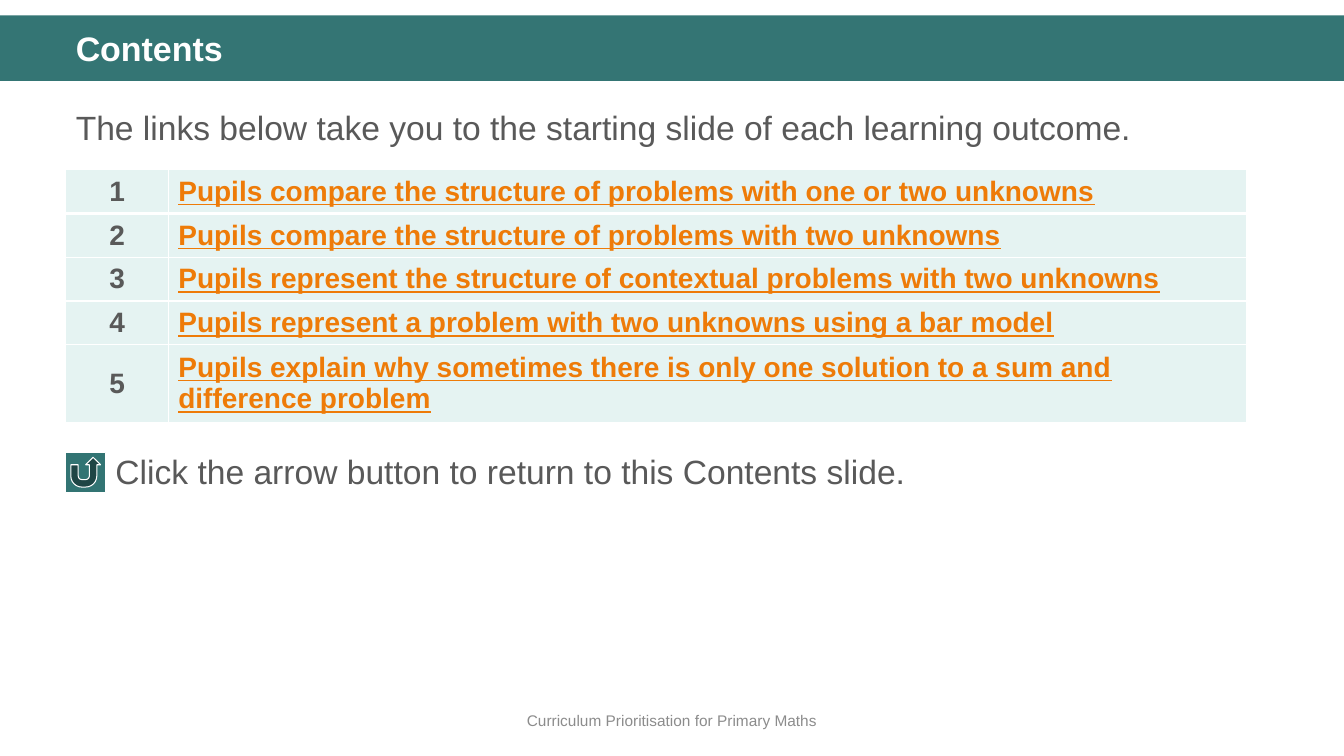
from dataclasses import dataclass

import pptx
import pptx.dml.color
import pptx.enum.shapes
import pptx.enum.text
import pptx.oxml
import pptx.oxml.ns
import pptx.util

Cm, Pt = pptx.util.Cm, pptx.util.Pt
RGBColor = pptx.dml.color.RGBColor
MSO_SHAPE = pptx.enum.shapes.MSO_SHAPE
PP_ALIGN = pptx.enum.text.PP_ALIGN
MSO_ANCHOR = pptx.enum.text.MSO_ANCHOR

TEAL_BAND = RGBColor(0x34, 0x75, 0x74)
TEAL_BUTTON = RGBColor(0x32, 0x74, 0x73)
PALE_TEAL = RGBColor(0xE5, 0xF3, 0xF2)
ORANGE = RGBColor(0xEE, 0x7B, 0x08)
DARK_GREY = RGBColor(0x59, 0x59, 0x59)
MID_GREY = RGBColor(0x8C, 0x8C, 0x8C)
WHITE = RGBColor(0xFF, 0xFF, 0xFF)

SLIDE_W, SLIDE_H = 33.87, 19.05
MARGIN = 1.66
BODY_W = 30.94

OUTCOMES = [
    "Pupils compare the structure of problems with one or two unknowns",
    "Pupils compare the structure of problems with two unknowns",
    "Pupils represent the structure of contextual problems with two unknowns",
    "Pupils represent a problem with two unknowns using a bar model",
    "Pupils explain why sometimes there is only one solution to a sum and difference problem",
]


@dataclass
class Box:
    """Position and size in centimetres."""
    left: float
    top: float
    width: float
    height: float

    def lengths(self) -> list:
        return [Cm(v) for v in (self.left, self.top, self.width, self.height)]


def write_text(tf, text: str, *, size: float, color: RGBColor, bold: bool = False,
               underline: bool = False, align=PP_ALIGN.LEFT, spacing: float = 1.0) -> None:
    p = tf.paragraphs[0]
    p.alignment = align
    p.line_spacing = spacing
    r = p.add_run()
    r.text = text
    r.font.name = "Arial"
    r.font.size = Pt(size)
    r.font.bold = bold
    r.font.underline = underline
    r.font.color.rgb = color


def add_text(s, box: Box, text: str, *, anchor=MSO_ANCHOR.TOP, **fmt) -> None:
    tf = s.shapes.add_textbox(*box.lengths()).text_frame
    tf.word_wrap = True
    tf.vertical_anchor = anchor
    write_text(tf, text, **fmt)


def add_shape(s, kind, box: Box, fill: RGBColor):
    sp = s.shapes.add_shape(kind, *box.lengths())
    sp.shadow.inherit = False
    sp.fill.solid()
    sp.fill.fore_color.rgb = fill
    sp.line.fill.background()
    return sp


def style_cell(cell, top: float, bottom: float) -> None:
    """White borders (widths in points) around a pale fill."""
    tc_pr = cell._tc.get_or_add_tcPr()
    for side, width in {"L": 1, "R": 1, "T": top, "B": bottom}.items():
        tc_pr.append(pptx.oxml.parse_xml(
            f'<a:ln{side} {pptx.oxml.ns.nsdecls("a")} w="{Pt(width)}">'
            f'<a:solidFill><a:srgbClr val="{WHITE}"/></a:solidFill></a:ln{side}>'))
    cell.fill.solid()
    cell.fill.fore_color.rgb = PALE_TEAL
    cell.vertical_anchor = MSO_ANCHOR.MIDDLE


def add_outcomes(s, left: float, top: float) -> None:
    col_widths, row_h = (2.58, 27.18), 1.04
    box = Box(left, top, sum(col_widths), row_h * len(OUTCOMES))
    table = s.shapes.add_table(len(OUTCOMES), len(col_widths), *box.lengths()).table
    for column, width in zip(table.columns, col_widths):
        column.width = Cm(width)
    for i, outcome in enumerate(OUTCOMES):
        table.rows[i].height = Cm(row_h)
        number, title = table.cell(i, 0), table.cell(i, 1)
        for cell in (number, title):
            style_cell(cell, top=3 if i == 1 else 1, bottom=3 if i == 0 else 1)
        write_text(number.text_frame, str(i + 1), size=20, color=DARK_GREY,
                   bold=True, align=PP_ALIGN.CENTER)
        write_text(title.text_frame, outcome, size=20, color=ORANGE,
                   bold=True, underline=True)


def main() -> None:
    prs = pptx.Presentation()
    prs.slide_width, prs.slide_height = Cm(SLIDE_W), Cm(SLIDE_H)
    s = prs.slides.add_slide(prs.slide_layouts[6])

    # Title band and footer
    add_shape(s, MSO_SHAPE.RECTANGLE, Box(0, 0.39, SLIDE_W, 1.65), TEAL_BAND)
    add_text(s, Box(MARGIN, 0.68, BODY_W, 1.2), "Contents", size=24.3, color=WHITE,
             bold=True, spacing=0.9, anchor=MSO_ANCHOR.MIDDLE)
    add_text(s, Box(0, 17.65, SLIDE_W, 1.02), "Curriculum Prioritisation for Primary Maths",
             size=11, color=MID_GREY, align=PP_ALIGN.CENTER, anchor=MSO_ANCHOR.MIDDLE)

    # Introduction and learning outcomes
    add_text(s, Box(MARGIN, 2.36, BODY_W, 1.5),
             "The links below take you to the starting slide of each learning outcome.",
             size=24, color=DARK_GREY, spacing=1.2)
    add_outcomes(s, MARGIN, 4.28)

    # Return button with its explanation
    button = add_shape(s, MSO_SHAPE.ACTION_BUTTON_RETURN, Box(MARGIN, 11.4, 1, 1), TEAL_BUTTON)
    button.line.color.rgb = WHITE
    button.line.width = Pt(0.75)
    add_text(s, Box(MARGIN + 1, 11.25, 28.75, 1.28),
             "Click the arrow button to return to this Contents slide.",
             size=24, color=DARK_GREY)

    prs.save("out.pptx")


if __name__ == "__main__":
    main()
